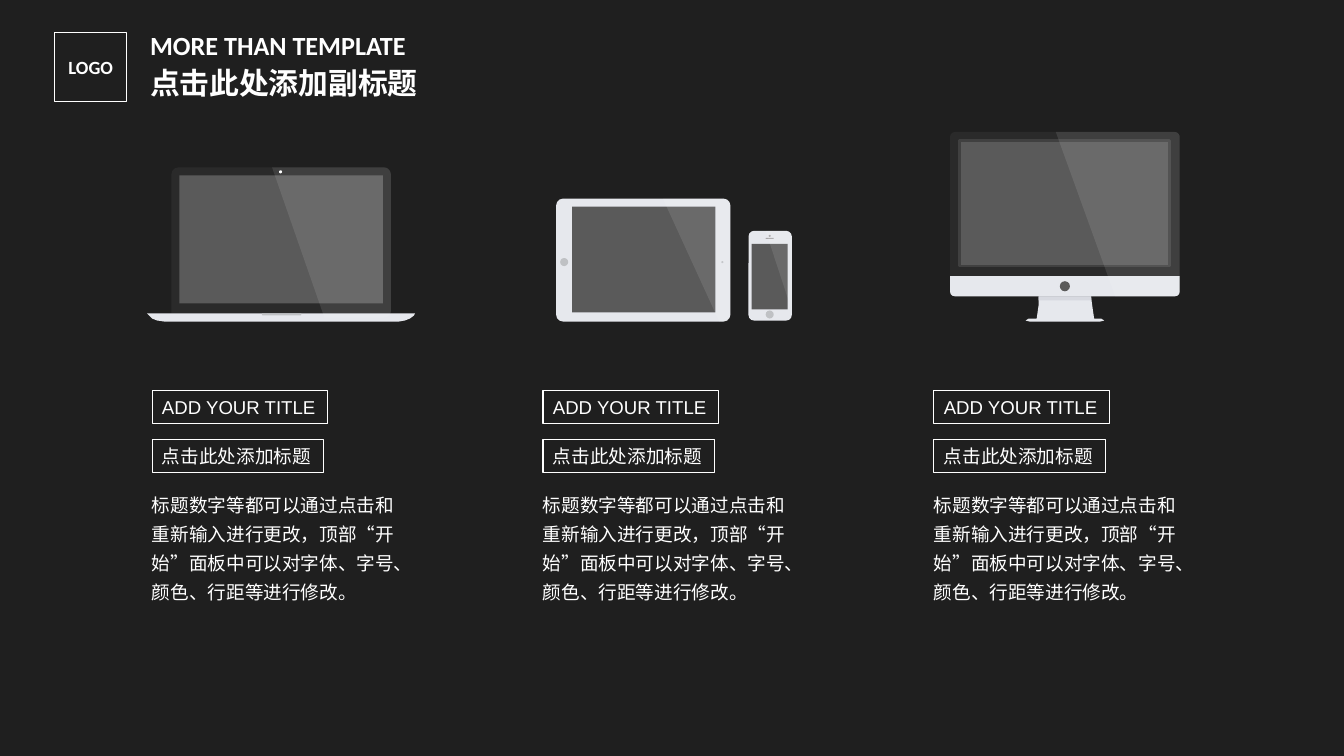
from math import cos, pi, sin

from lxml import etree
from pptx import Presentation
from pptx.dml.color import RGBColor
from pptx.enum.shapes import MSO_SHAPE as SHAPE
from pptx.enum.text import MSO_ANCHOR as ANCHOR, MSO_AUTO_SIZE as AUTO_SIZE, PP_ALIGN as ALIGN
from pptx.oxml.ns import qn
from pptx.util import Inches, Pt

COLORS = {"background": "1F1F1F", "white": "FFFFFF", "body": "E6E8ED", "bezel": "2A2A2A",
          "screen": "5A5A5A", "button": "BFC1C4", "speaker": "A7A5A6", "shade": "D7D9E0",
          "frame": "404040"}
CJK = "Noto Sans CJK SC"


def add_piece(kind, left, top, width, height, fill=None, line=None, weight=0.75, adjust=()):
    piece = page.shapes.add_shape(kind, Inches(left), Inches(top), Inches(width), Inches(height))
    piece.shadow.inherit = False
    for index, value in enumerate(adjust):
        piece.adjustments[index] = value
    if fill:
        piece.fill.solid()
        piece.fill.fore_color.rgb = RGBColor.from_string(COLORS[fill])
    else:
        piece.fill.background()
    if line:
        piece.line.color.rgb = RGBColor.from_string(COLORS[line])
        piece.line.width = Pt(weight)
    else:
        piece.line.fill.background()
    return piece


def style_text(para, font, size, bold=False, align=ALIGN.LEFT, spacing=1.0):
    para.alignment = align
    para.line_spacing = spacing
    for span in para.runs:
        span.font.name = font
        span.font.size = Pt(size)
        span.font.bold = bold
        span.font.color.rgb = RGBColor.from_string(COLORS["white"])
        etree.SubElement(span.font._element, qn("a:ea")).set("typeface", CJK)


deck = Presentation()
deck.slide_width, deck.slide_height = Inches(13.34), Inches(7.5)
page = deck.slides.add_slide(deck.slide_layouts[5])
page.background.fill.solid()
page.background.fill.fore_color.rgb = RGBColor.from_string(COLORS["background"])

# Title and logo box
title = page.shapes.title
title.left, title.top, title.width, title.height = map(Inches, (1.36, 0.19, 3.15, 0.88))
logo = add_piece(SHAPE.RECTANGLE, 0.54, 0.32, 0.72, 0.69, line="white")
for box, text in ((title, "MORE THAN TEMPLATE\n点击此处添加副标题"), (logo, "LOGO")):
    frame = box.text_frame
    frame.text = text
    frame.word_wrap = True
    frame.auto_size = AUTO_SIZE.NONE
    frame.vertical_anchor = ANCHOR.MIDDLE
    frame.margin_left = frame.margin_right = Inches(0.13)
    frame.margin_top = frame.margin_bottom = Inches(0.07)
style_text(title.text_frame.paragraphs[0], "Calibri", 18.7, bold=True, spacing=1.1)
style_text(title.text_frame.paragraphs[1], CJK, 21.3, bold=True, spacing=1.1)
style_text(logo.text_frame.paragraphs[0], "Calibri", 13.3, bold=True, align=ALIGN.CENTER)

# Laptop base and monitor stand
outlines = [
    ([(1.46, 3.11), (4.12, 3.11), (4.11, 3.13), (4.07, 3.16), (4.02, 3.18), (3.96, 3.19),
      (1.63, 3.19), (1.56, 3.18), (1.51, 3.16), (1.48, 3.13)], "body", None),
    ([(10.31, 2.94), (10.83, 2.94), (10.84, 3.02), (10.86, 3.16), (10.93, 3.16), (10.96, 3.18),
      (10.92, 3.19), (10.22, 3.19), (10.18, 3.18), (10.21, 3.16), (10.29, 3.16), (10.31, 3.02)],
     "body", None)]

# Glare: top-left x, bottom-left x, top, right, bottom, top radius, bottom radius
glares = [(2.7, 3.22, 1.66, 3.88, 3.15, 0.07, 0.07), (6.58, 7.14, 1.97, 7.25, 3.19, 0.06, 0.06),
          (7.6, 7.86, 2.29, 7.86, 3.08, 0.06, 0), (10.48, 11.07, 1.31, 11.71, 2.94, 0.05, 0.05)]
for top_x, bottom_x, top, right, bottom, top_radius, bottom_radius in glares:
    points = [(top_x, top)]
    for center_y, radius, start in ((top + top_radius, top_radius, -pi / 2),
                                    (bottom - bottom_radius, bottom_radius, 0)):
        for step in range(7):
            angle = start + step * pi / 12
            points.append((right - radius + radius * cos(angle), center_y + radius * sin(angle)))
    outlines.append((points + [(bottom_x, bottom)], "white", 10))

# Device parts, from back to front
ROUND, TWO_ROUND = SHAPE.ROUNDED_RECTANGLE, SHAPE.ROUND_2_SAME_RECTANGLE
RECT, OVAL = SHAPE.RECTANGLE, SHAPE.OVAL
parts = [
    # Laptop
    (TWO_ROUND, 1.7, 1.66, 2.18, 1.45, "bezel", (0.05, 0)),
    (RECT, 1.78, 1.74, 2.02, 1.27, "screen"),
    (OVAL, 2.77, 1.69, 0.03, 0.03, "white"),
    # Tablet
    (ROUND, 5.52, 1.97, 1.73, 1.22, "body", (0.057,)),
    (RECT, 5.68, 2.05, 1.42, 1.05, "screen"),
    (OVAL, 5.56, 2.56, 0.08, 0.08, "button"),
    (OVAL, 7.16, 2.59, 0.02, 0.02, "button"),
    # Phone
    (ROUND, 7.43, 2.29, 0.43, 0.89, "body", (0.13,)),
    (RECT, 7.46, 2.42, 0.36, 0.65, "screen"),
    (OVAL, 7.6, 3.08, 0.08, 0.08, "button"),
    (OVAL, 7.63, 2.33, 0.02, 0.02, "speaker"),
    (ROUND, 7.6, 2.36, 0.08, 0.01, "speaker", (0.5,)),
    # Monitor, with a plain dot as its badge
    (ROUND, 9.43, 1.31, 2.28, 1.63, "bezel", (0.029,)),
    (TWO_ROUND, 9.43, 2.74, 2.28, 0.2, "body", (0, 0.24)),
    (OVAL, 10.52, 2.79, 0.1, 0.1, "screen")]
for kind, left, top, width, height, fill, *adjust in parts:
    add_piece(kind, left, top, width, height, fill, adjust=adjust[0] if adjust else ())
add_piece(RECT, 9.52, 1.39, 2.09, 1.25, "screen", line="frame", weight=2)

for points, fill, opacity in outlines:
    corners = [(Inches(x), Inches(y)) for x, y in points]
    builder = page.shapes.build_freeform(*corners[0])
    builder.add_line_segments(corners[1:], close=True)
    outline = builder.convert_to_shape()
    outline.shadow.inherit = False
    outline.line.fill.background()
    outline.fill.solid()
    outline.fill.fore_color.rgb = RGBColor.from_string(COLORS[fill])
    if opacity:
        color = next(outline._element.spPr.iter(qn("a:srgbClr")))
        etree.SubElement(color, qn("a:alpha")).set("val", str(opacity * 1000))

# Laptop notch and shade on the stand
add_piece(TWO_ROUND, 2.6, 3.11, 0.39, 0.02, "button", adjust=(0, 0.5))
add_piece(RECT, 10.31, 2.94, 0.52, 0.04, "shade")

# Three text columns
for column in range(3):
    left = 1.51 + 3.88 * column
    for top, width, text in ((3.87, 1.74, "ADD YOUR TITLE"), (4.36, 1.7, "点击此处添加标题")):
        label = add_piece(RECT, left, top, width, 0.33, line="white")
        label.text_frame.text = text
        label.text_frame.word_wrap = False
        label.text_frame.vertical_anchor = ANCHOR.MIDDLE
        style_text(label.text_frame.paragraphs[0], "Arial", 13.3)
    body = page.shapes.add_textbox(Inches(left - 0.1), Inches(4.78), Inches(2.72), Inches(1.27))
    body.text_frame.word_wrap = True
    body.text_frame.text = ("标题数字等都可以通过点击和重新输入进行更改，顶部“开始”面板中"
                            "可以对字体、字号、颜色、行距等进行修改。")
    style_text(body.text_frame.paragraphs[0], CJK, 13.3, spacing=1.3)

deck.save("out.pptx")
